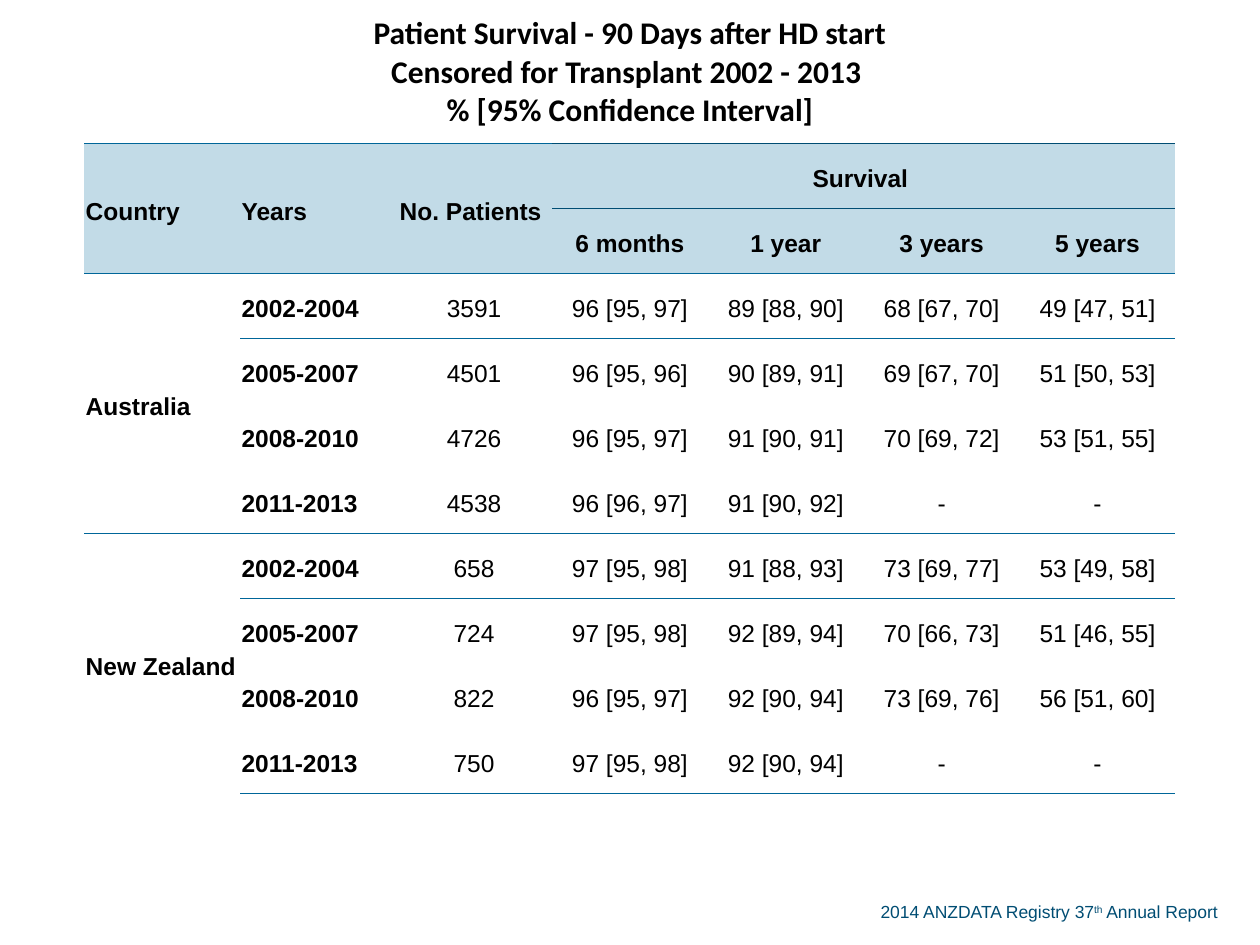
from dataclasses import dataclass

from lxml import etree
from pptx import Presentation
from pptx.dml.color import RGBColor
from pptx.enum.text import MSO_ANCHOR, PP_ALIGN
from pptx.oxml.ns import qn
from pptx.slide import Slide
from pptx.table import Table, _Cell
from pptx.util import Inches, Pt

LEFT = PP_ALIGN.LEFT
CENTER = PP_ALIGN.CENTER
MIDDLE = MSO_ANCHOR.MIDDLE

BLACK = RGBColor(0x00, 0x00, 0x00)
NAVY = RGBColor(0x00, 0x4D, 0x73)
BLUE = RGBColor(0x00, 0x66, 0x99)
PALE = RGBColor(0xC2, 0xDB, 0xE7)

WIDE, HIGH = Inches(10), Inches(7.5)
COLS, ROWS = 7, 11
TABLE_WIDE, TABLE_HIGH = Inches(8.66), Inches(6.3)
TITLE_HIGH = Inches(1.14)
ROW_HIGH = (TABLE_HIGH - TITLE_HIGH) // (ROWS - 1)
PLAIN_STYLE = "{2D5ABB26-0587-4C30-8999-92F81FD0307C}"

TITLE = (
    "Patient Survival - 90 Days after HD start\n"
    "Censored for Transplant 2002 - 2013 \n"
    "% [95% Confidence Interval]"
)
HEADS = ("Country", "Years", "No. Patients ")
SPANS = ("6 months", "1 year", "3 years", "5 years")
YEARS = ("2002-2004", "2005-2007", "2008-2010", "2011-2013")


@dataclass(frozen=True)
class Group:
    land: str
    rows: tuple[tuple[str, ...], ...]


GROUPS = (
    Group("Australia", (
        ("3591", "96 [95, 97]", "89 [88, 90]", "68 [67, 70]", "49 [47, 51]"),
        ("4501", "96 [95, 96]", "90 [89, 91]", "69 [67, 70]", "51 [50, 53]"),
        ("4726", "96 [95, 97]", "91 [90, 91]", "70 [69, 72]", "53 [51, 55]"),
        ("4538", "96 [96, 97]", "91 [90, 92]", "-", "-"),
    )),
    Group("New Zealand", (
        ("658", "97 [95, 98]", "91 [88, 93]", "73 [69, 77]", "53 [49, 58]"),
        ("724", "97 [95, 98]", "92 [89, 94]", "70 [66, 73]", "51 [46, 55]"),
        ("822", "96 [95, 97]", "92 [90, 94]", "73 [69, 76]", "56 [51, 60]"),
        ("750", "97 [95, 98]", "92 [90, 94]", "-", "-"),
    )),
)


def draw_edge(cell: _Cell, side: str, color: RGBColor, width: float) -> None:
    props = cell._tc.get_or_add_tcPr()
    line = etree.SubElement(props, qn(f"a:{side}"), w=str(Pt(width)))
    fill = etree.SubElement(line, qn("a:solidFill"))
    etree.SubElement(fill, qn("a:srgbClr"), val=str(color))


def rule_table(table: Table) -> None:
    last = [0, 2, 6, 10]
    for row in range(ROWS):
        for col in range(COLS):
            cell = table.cell(row, col)
            if row == 1 and col >= len(HEADS):
                draw_edge(cell, "lnT", NAVY, 1)
            elif row - 1 in last:
                draw_edge(cell, "lnT", BLUE, 0.5)
            if row in last:
                draw_edge(cell, "lnB", BLUE, 0.5)
            if row in (1, 2):
                cell.fill.solid()
                cell.fill.fore_color.rgb = PALE
            else:
                cell.fill.background()


def write_cell(cell: _Cell, text: str, bold: bool = True, align: PP_ALIGN = CENTER,
               face: str = "Arial", size: int = 14) -> None:
    cell.vertical_anchor = MIDDLE
    cell.margin_left = cell.margin_right = cell.margin_top = Inches(0.01)
    cell.margin_bottom = 0
    para = cell.text_frame.paragraphs[0]
    para.text = text
    para.alignment = align
    para.font.name = face
    para.font.size = Pt(size)
    para.font.bold = bold
    para.font.color.rgb = BLACK
    if face == "Arial":
        para.line_spacing = 1.19
        para.space_after = Pt(14)


def join_cells(table: Table, row: int, col: int, down: int, across: int) -> _Cell:
    cell = table.cell(row, col)
    cell.merge(table.cell(row + down - 1, col + across - 1))
    return cell


def draw_table(slide: Slide) -> None:
    frame = slide.shapes.add_table(
        ROWS, COLS, (WIDE - TABLE_WIDE) // 2, 0, TABLE_WIDE, TABLE_HIGH)
    table = frame.table
    table.first_row = table.horz_banding = False
    frame.element.find(f".//{qn('a:tableStyleId')}").text = PLAIN_STYLE
    for col in table.columns:
        col.width = TABLE_WIDE // COLS
    for row in table.rows:
        row.height = ROW_HIGH
    table.rows[0].height = TITLE_HIGH
    rule_table(table)

    write_cell(join_cells(table, 0, 0, 1, COLS), TITLE, face="Calibri", size=18)
    for col, head in enumerate(HEADS):
        cell = join_cells(table, 1, col, 2, 1)
        write_cell(cell, head, align=LEFT if col < 2 else CENTER)
    write_cell(join_cells(table, 1, len(HEADS), 1, len(SPANS)), "Survival ")
    for col, span in enumerate(SPANS, len(HEADS)):
        write_cell(table.cell(2, col), span)

    for index, group in enumerate(GROUPS):
        first = 3 + index * len(YEARS)
        land = join_cells(table, first, 0, len(YEARS), 1)
        write_cell(land, group.land, align=LEFT)
        for row, (years, items) in enumerate(zip(YEARS, group.rows), first):
            write_cell(table.cell(row, 1), years, align=LEFT)
            for col, item in enumerate(items, 2):
                write_cell(table.cell(row, col), item, bold=False)


def draw_source(slide: Slide) -> None:
    box = slide.shapes.add_textbox(Inches(6.89), Inches(7.1), Inches(2.99), Inches(0.27))
    box.text_frame.word_wrap = True
    para = box.text_frame.paragraphs[0]
    for text, raised in (("2014 ANZDATA Registry 37", False), ("th", True),
                         (" Annual Report", False)):
        run = para.add_run()
        run.text = text
        if raised:
            run._r.get_or_add_rPr().set("baseline", "30000")
    para.font.name = "Arial"
    para.font.size = Pt(10)
    para.font.color.rgb = NAVY


def main() -> None:
    deck = Presentation()
    deck.slide_width, deck.slide_height = WIDE, HIGH
    slide = deck.slides.add_slide(deck.slide_layouts[6])
    draw_source(slide)
    draw_table(slide)
    deck.save("out.pptx")


if __name__ == "__main__":
    main()
